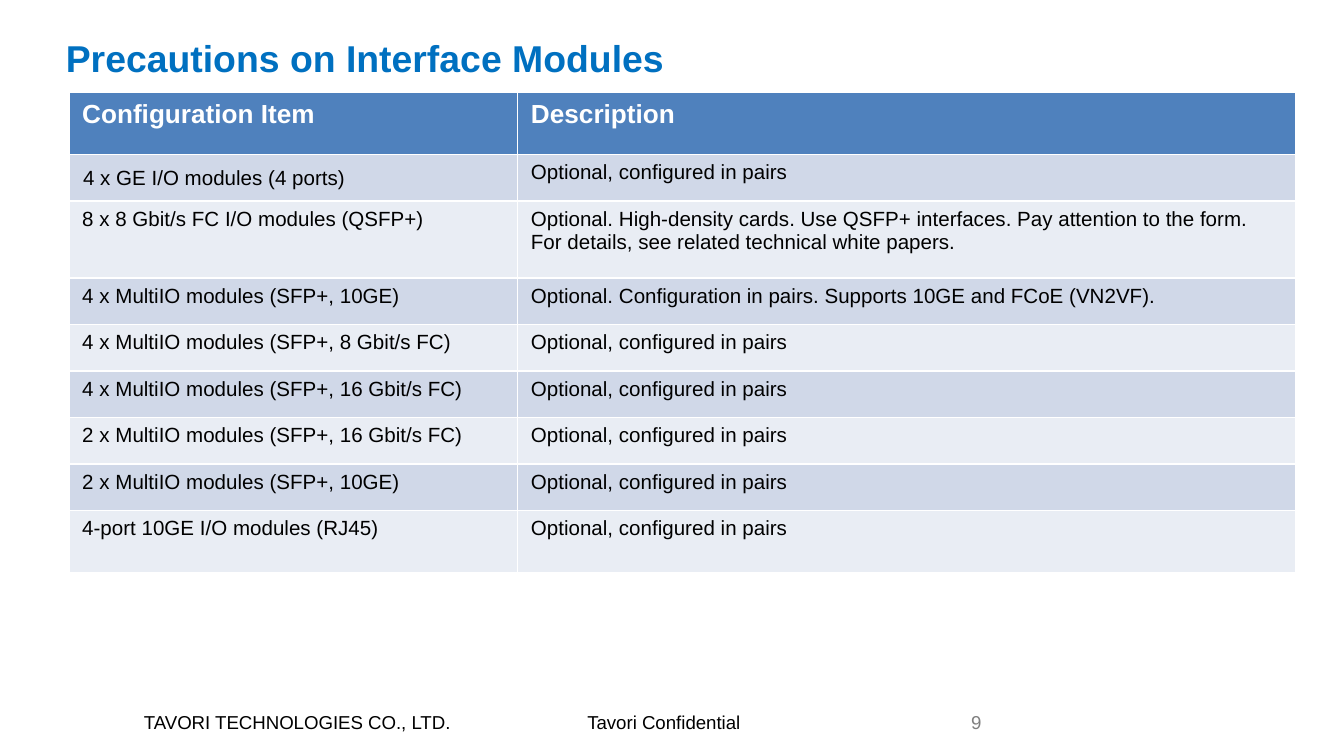
import pptx
import pptx.util
import pptx.dml.color
import pptx.enum.text
import pptx.oxml
import pptx.oxml.ns

Cm = pptx.util.Cm
Pt = pptx.util.Pt
ALIGN = pptx.enum.text.PP_ALIGN
ANCHOR = pptx.enum.text.MSO_ANCHOR

HUES = {
    "title": "0070C0",
    "head": "4F81BD",
    "dark": "D0D8E8",
    "light": "E9EDF4",
    "white": "FFFFFF",
    "black": "000000",
    "gray": "808080",
}

PAIRS = "Optional, configured in pairs"
ROWS = [
    ("Configuration Item", "Description"),
    ("4 x GE I/O modules (4 ports)", PAIRS),
    ("8 x 8 Gbit/s FC I/O modules (QSFP+)",
     "Optional. High-density cards. Use QSFP+ interfaces. Pay attention to "
     "the form. For details, see related technical white papers."),
    ("4 x MultiIO modules (SFP+, 10GE)",
     "Optional. Configuration in pairs. Supports 10GE and FCoE (VN2VF)."),
    ("4 x MultiIO modules (SFP+, 8 Gbit/s FC)", PAIRS),
    ("4 x MultiIO modules (SFP+, 16 Gbit/s FC)", PAIRS),
    ("2 x MultiIO modules (SFP+, 16 Gbit/s FC)", PAIRS),
    ("2 x MultiIO modules (SFP+, 10GE)", PAIRS),
    ("4-port 10GE I/O modules (RJ45)", PAIRS),
]
WIDTHS = (8.48, 14.71)
HEIGHT = 0.88
TALL = {0: 1.17, 2: 1.45, 8: 1.17}


def color(name):
    return pptx.dml.color.RGBColor.from_string(HUES[name])


def style(para, size, hue, bold=False):
    font = para.font
    font.name = "Arial"
    font.size = Pt(size)
    font.bold = bold
    font.color.rgb = color(hue)


def add_title(slide, text):
    title = slide.shapes.title
    title.left, title.top = Cm(0.99), Cm(0.53)
    title.width, title.height = Cm(21.51), Cm(1.83)
    frame = title.text_frame
    frame.text = text
    frame.vertical_anchor = ANCHOR.TOP
    para = frame.paragraphs[0]
    para.alignment = ALIGN.LEFT
    style(para, 20, "title", True)


def add_edges(cell):
    props = cell._tc.get_or_add_tcPr()
    for spot, side in enumerate("LRTB"):
        line = pptx.oxml.parse_xml(
            f'<a:ln{side} {pptx.oxml.ns.nsdecls("a")} w="{Pt(1)}"><a:solidFill>'
            f'<a:srgbClr val="{HUES["white"]}"/></a:solidFill></a:ln{side}>')
        props.insert(spot, line)


def fill_cell(cell, text, row):
    cell.text = text
    cell.fill.solid()
    hue = "head" if row == 0 else "dark" if row % 2 else "light"
    cell.fill.fore_color.rgb = color(hue)
    para = cell.text_frame.paragraphs[0]
    if row == 0:
        style(para, 14, "white", True)
    else:
        style(para, 11, "black")
    add_edges(cell)


def add_grid(slide):
    tall = [TALL.get(i, HEIGHT) for i in range(len(ROWS))]
    grid = slide.shapes.add_table(
        len(ROWS), len(WIDTHS), Cm(1.3), Cm(1.75),
        Cm(sum(WIDTHS)), Cm(sum(tall))).table
    for col, width in zip(grid.columns, WIDTHS):
        col.width = Cm(width)
    for i, texts in enumerate(ROWS):
        grid.rows[i].height = Cm(tall[i])
        for j, text in enumerate(texts):
            fill_cell(grid.cell(i, j), text, i)

    # The first module is centred in its row
    first = grid.cell(1, 0)
    first.vertical_anchor = ANCHOR.MIDDLE
    first.margin_left = Cm(0.27)
    first.margin_right = first.margin_top = Cm(0.03)
    first.margin_bottom = 0


def add_note(slide, text, place, hue, inset, align=ALIGN.LEFT):
    box = slide.shapes.add_textbox(*(Cm(n) for n in place))
    frame = box.text_frame
    frame.word_wrap = False
    (frame.margin_left, frame.margin_top,
     frame.margin_right, frame.margin_bottom) = (Cm(n) for n in inset)
    frame.text = text
    para = frame.paragraphs[0]
    para.alignment = align
    style(para, 10, hue)


def main():
    deck = pptx.Presentation()
    deck.slide_width, deck.slide_height = Cm(25.4), Cm(14.29)
    slide = deck.slides.add_slide(deck.slide_layouts[5])

    # Title and table
    add_title(slide, "Precautions on Interface Modules")
    add_grid(slide)

    # Footer
    add_note(slide, "TAVORI TECHNOLOGIES CO., LTD.", (2.72, 13.44, 6.27, 0.43),
             "black", (0, 0, 0.23, 0))
    add_note(slide, "Tavori Confidential", (10.87, 13.44, 3.71, 0.43),
             "black", (0.23, 0, 0.23, 0))
    add_note(slide, "9", (17.86, 13.31, 0.94, 0.69),
             "gray", (0.25, 0.13, 0.25, 0.13), ALIGN.RIGHT)

    deck.save("out.pptx")


if __name__ == "__main__":
    main()
